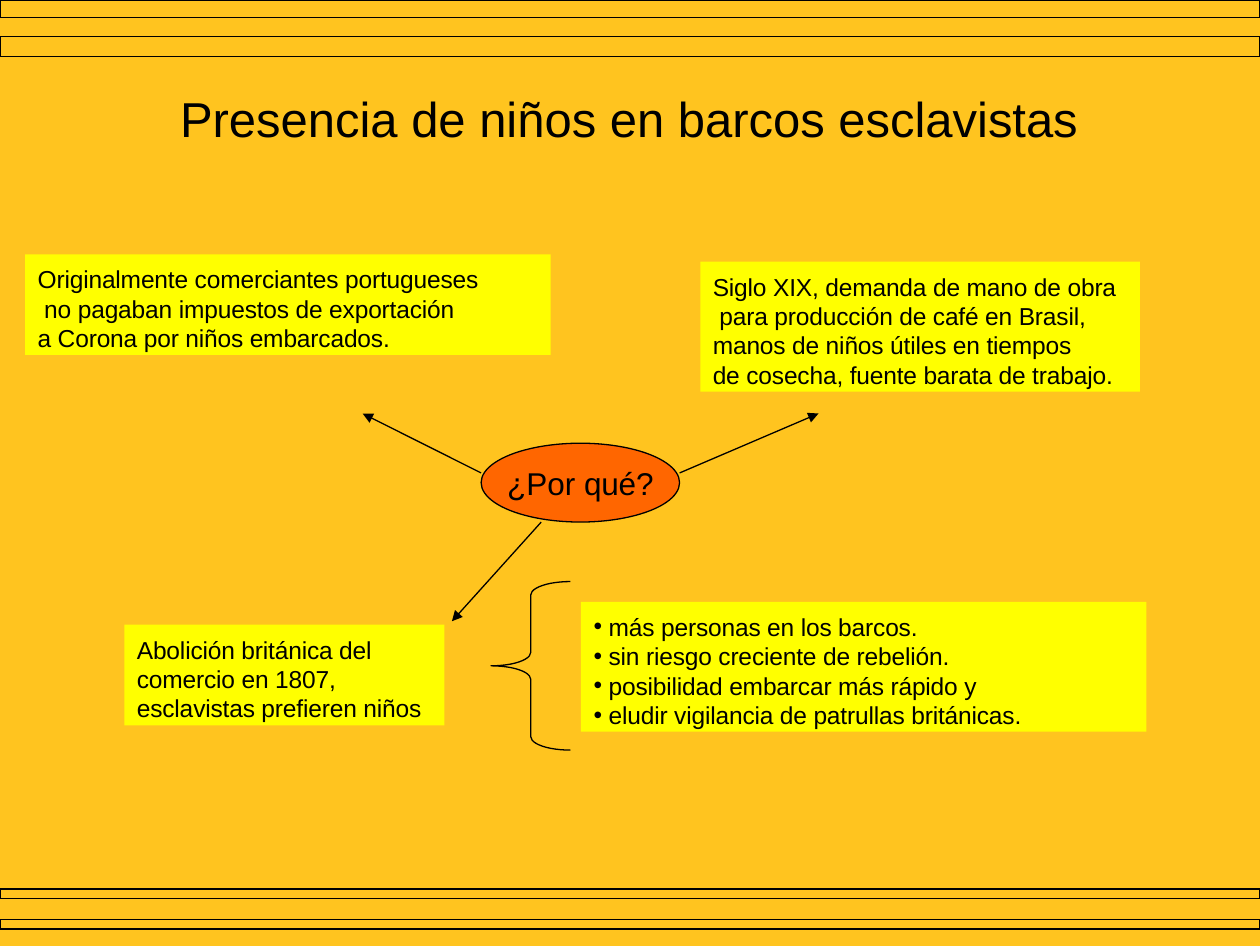
from lxml.etree import SubElement
from pptx import Presentation
from pptx.dml.color import RGBColor
from pptx.enum.shapes import MSO_CONNECTOR, MSO_SHAPE
from pptx.enum.text import MSO_ANCHOR, PP_ALIGN
from pptx.oxml.ns import qn
from pptx.util import Cm, Pt

COLORS = {"background": "FFC41F", "note": "FFFF00", "oval": "FF6600", "ink": "000000"}
FONT = "Arial"
BARS = [(0, 0.36), (0.74, 0.4), (17.93, 0.2), (18.54, 0.2)]
NOTES = [
    ((0.51, 5.13, 10.59, 2.03), [
        ["Originalmente comerciantes portugueses", " no pagaban impuestos de exportación"],
        ["a Corona por niños embarcados."]]),
    ((14.12, 5.28, 8.86, 2.62), [
        ["Siglo XIX, demanda de mano de obra", " para producción de café en Brasil,",
         "manos de niños útiles en tiempos"],
        ["de cosecha, fuente barata de trabajo."]]),
    ((2.51, 12.6, 6.45, 2.03), [
        ["Abolición británica del", "comercio en 1807,", "esclavistas prefieren niños"]]),
]
REASONS = [
    ["más personas en los barcos."],
    ["sin riesgo creciente de rebelión."],
    ["posibilidad embarcar más rápido y"],
    ["eludir vigilancia de patrullas británicas."],
]


def color(name):
    return RGBColor.from_string(COLORS[name])


def add_run(p, text, size, spacing=0):
    r = p.add_run()
    r.text = text
    r.font.name, r.font.size = FONT, Pt(size)
    r.font.color.rgb = color("ink")
    if spacing:
        r.font._element.set("spc", str(spacing))


def set_frame(tf, left=0, top=0):
    tf.word_wrap = True
    tf.vertical_anchor = MSO_ANCHOR.TOP
    tf.margin_left, tf.margin_top = Cm(left), Cm(top)
    tf.margin_right = tf.margin_bottom = 0


def add_figure(s, kind, box, fill=None, outline=True):
    sp = s.shapes.add_shape(kind, *map(Cm, box))
    sp.shadow.inherit = False
    if fill:
        sp.fill.solid()
        sp.fill.fore_color.rgb = color(fill)
    else:
        sp.fill.background()
    if outline:
        sp.line.color.rgb = color("ink")
        sp.line.width = Pt(0.75)
    else:
        sp.line.fill.background()
    return sp


def add_arrow(s, start, end):
    cn = s.shapes.add_connector(MSO_CONNECTOR.STRAIGHT, *map(Cm, start + end))
    cn.line.color.rgb = color("ink")
    cn.line.width = Pt(0.75)
    SubElement(cn.line._get_or_add_ln(), qn("a:tailEnd"), type="triangle")
    SubElement(cn._element.spPr, qn("a:effectLst"))


def add_bullet(p):
    pPr = p._p.get_or_add_pPr()
    pPr.set("marL", str(Cm(0.56)))
    pPr.set("indent", str(Cm(-0.3)))
    SubElement(pPr, qn("a:buFont"), typeface=FONT)
    SubElement(pPr, qn("a:buChar"), char="•")


def add_bars(s, width):
    for top, height in BARS:
        add_figure(s, MSO_SHAPE.RECTANGLE, (0, top, width, height))


def add_title(s, box):
    tf = s.shapes.add_textbox(*map(Cm, box)).text_frame
    set_frame(tf, left=1.7, top=0.65)
    add_run(tf.paragraphs[0], "Presencia de niños en barcos esclavistas", 28)


def add_note(s, box, paragraphs, bulleted=False):
    sp = add_figure(s, MSO_SHAPE.RECTANGLE, box, "note", outline=False)
    tf = sp.text_frame
    set_frame(tf, left=0 if bulleted else 0.25, top=0.2)
    for i, lines in enumerate(paragraphs):
        p = tf.add_paragraph() if i else tf.paragraphs[0]
        p.alignment = PP_ALIGN.LEFT
        p.line_spacing = Pt(16.8)
        if bulleted:
            add_bullet(p)
        for j, line in enumerate(lines):
            if j:
                p.add_line_break()
            add_run(p, line, 14, -10)


def add_question(s, box):
    x, y, w, h = box
    sp = add_figure(s, MSO_SHAPE.OVAL, box, "oval")
    tf = sp.text_frame
    set_frame(tf)
    tf.word_wrap = False
    tf.vertical_anchor = MSO_ANCHOR.MIDDLE
    p = tf.paragraphs[0]
    p.alignment = PP_ALIGN.CENTER
    add_run(p, "¿Por ", 18)
    add_run(p, "qué?", 18, -10)
    add_arrow(s, (x, y + 0.6), (x - 2.39, y - 0.6))
    add_arrow(s, (x + w, y + 0.6), (x + w + 2.8, y - 0.6))
    add_arrow(s, (x + 1.21, y + h), (x - 0.59, y + h + 2))


def add_reasons(s, box):
    x, y, w, h = box
    brace = add_figure(s, MSO_SHAPE.LEFT_BRACE, (x, y, 1.6, h))
    brace.adjustments[0] = 0.17
    add_note(s, (x + 1.81, y + 0.41, w - 1.81, 2.62), REASONS, bulleted=True)


def main():
    prs = Presentation()
    prs.slide_width, prs.slide_height = Cm(25.4), Cm(19.08)
    s = prs.slides.add_slide(prs.slide_layouts[6])
    s.background.fill.solid()
    s.background.fill.fore_color.rgb = color("background")
    add_bars(s, 25.4)
    add_title(s, (1.93, 1.14, 21.59, 2.39))
    for box, paragraphs in NOTES:
        add_note(s, box, paragraphs)
    add_question(s, (9.7, 8.94, 4, 1.59))
    add_reasons(s, (9.9, 11.73, 13.21, 3.4))
    prs.save("out.pptx")


if __name__ == "__main__":
    main()
